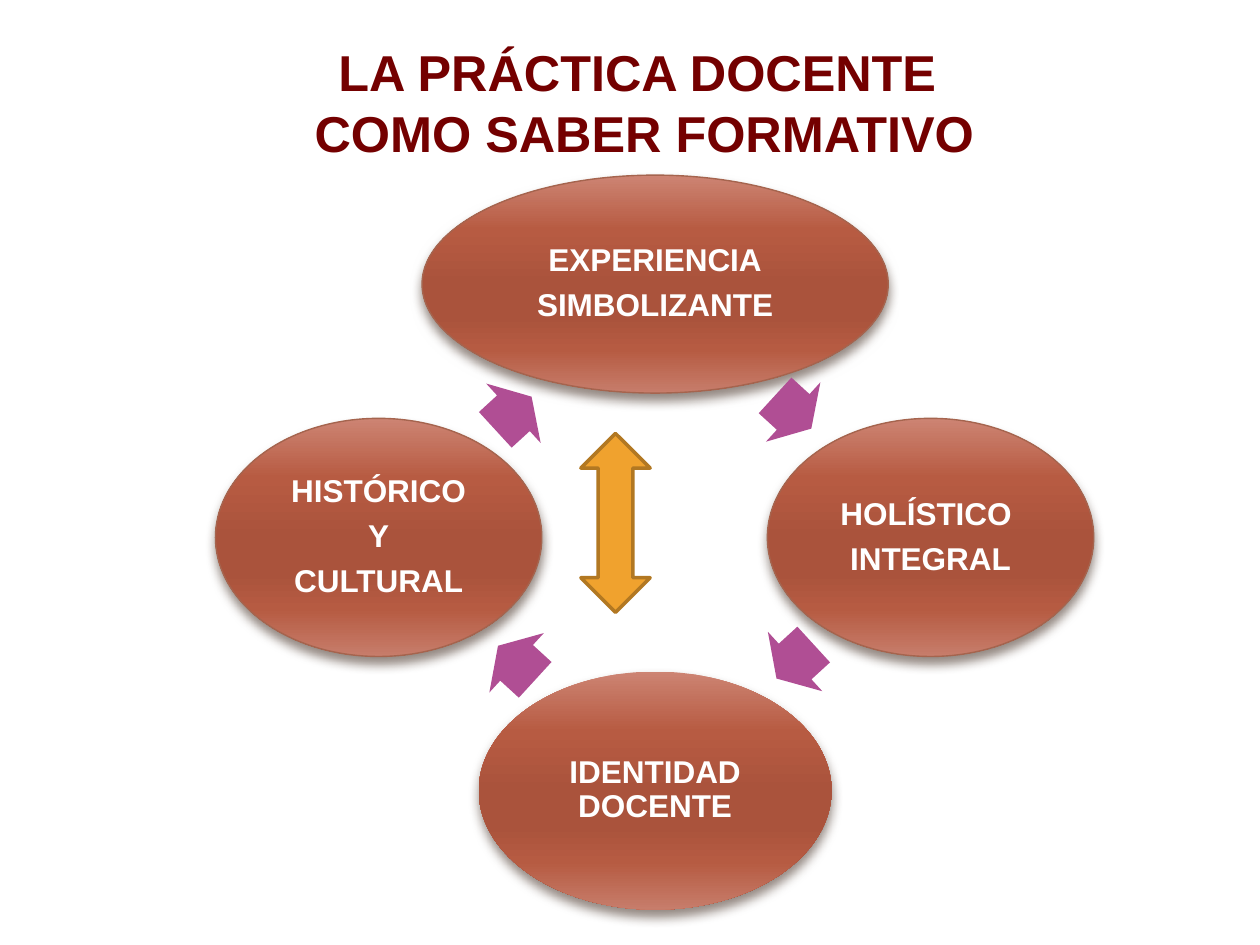
"""Build a slide with a four-part cycle on teaching practice."""
import pptx
import pptx.util
import pptx.oxml
import pptx.oxml.ns
import pptx.dml.color
import pptx.enum.shapes
import pptx.enum.text

Inches, Pt = pptx.util.Inches, pptx.util.Pt
RGBColor = pptx.dml.color.RGBColor
Kind = pptx.enum.shapes.MSO_SHAPE
Align = pptx.enum.text.PP_ALIGN
Anchor = pptx.enum.text.MSO_ANCHOR

WHITE = RGBColor(0xFF, 0xFF, 0xFF)
MAROON = RGBColor(0x74, 0x00, 0x00)
EDGE = RGBColor(0xA5, 0x64, 0x4E)
SHADE = RGBColor(0x4E, 0x3B, 0x30)
PURPLE = RGBColor(0xB0, 0x4E, 0x94)
GOLD = RGBColor(0xF0, 0xA2, 0x2E)
BRONZE = RGBColor(0xB2, 0x78, 0x22)
STOPS = [
    (0, RGBColor(0xCD, 0x84, 0x73)),
    (25, RGBColor(0xB7, 0x5B, 0x42)),
    (50, RGBColor(0xAA, 0x53, 0x3C)),
    (65, RGBColor(0xAA, 0x53, 0x3C)),
    (80, RGBColor(0xB6, 0x5B, 0x42)),
    (100, RGBColor(0xC7, 0x7D, 0x6B)),
]

TITLE = ["LA PRÁCTICA DOCENTE ", "COMO SABER FORMATIVO"]
OVALS = [
    (["EXPERIENCIA", "SIMBOLIZANTE"], (3.35, 1.39, 3.7, 1.73), True),
    (["HOLÍSTICO ", "INTEGRAL"], (6.09, 3.32, 2.59, 1.89), True),
    (["IDENTIDAD DOCENTE"], (3.8, 5.33, 2.8, 1.89), False),
    (["HISTÓRICO", " Y ", "CULTURAL"], (1.71, 3.32, 2.59, 1.89), True),
]
ARROWS = [
    ((6.1, 2.95, 0.39, 0.64), 42.5),
    ((6.11, 4.93, 0.4, 0.64), 137.5),
    ((3.9, 4.94, 0.4, 0.64), 222.5),
    ((3.88, 2.96, 0.39, 0.64), 317.5),
]
NS = pptx.oxml.ns.nsdecls("a")


def add_run(para, text, size, color):
    run = para.add_run()
    run.text = text
    run.font.name = "Arial"
    run.font.size = Pt(size)
    run.font.bold = True
    run.font.color.rgb = color


def add_form(slide, kind, box, edge=None, width=1):
    form = slide.shapes.add_shape(kind, *map(Inches, box))
    form.shadow.inherit = False
    if edge is None:
        form.line.fill.background()
    else:
        form.line.color.rgb = edge
        form.line.width = Pt(width)
    return form


def fill_solid(form, color):
    form.fill.solid()
    form.fill.fore_color.rgb = color


def add_glow(form):
    form.fill.gradient()
    props = form._element.spPr
    grad = props.find(pptx.oxml.ns.qn("a:gradFill"))
    stops = "".join(
        f'<a:gs pos="{pos * 1000}"><a:srgbClr val="{color}"/></a:gs>'
        for pos, color in STOPS)
    fresh = pptx.oxml.parse_xml(
        f'<a:gradFill {NS} rotWithShape="1"><a:gsLst>{stops}</a:gsLst>'
        '<a:lin ang="5400000" scaled="0"/></a:gradFill>')
    props.replace(grad, fresh)
    props.find(pptx.oxml.ns.qn("a:effectLst")).append(pptx.oxml.parse_xml(
        f'<a:outerShdw {NS} blurRad="{Pt(6)}" dist="{Pt(4)}" dir="5400000" '
        f'rotWithShape="0"><a:srgbClr val="{SHADE}">'
        '<a:alpha val="60000"/></a:srgbClr></a:outerShdw>'))


def add_oval(slide, lines, box, edged):
    oval = add_form(slide, Kind.OVAL, box, EDGE if edged else None, 0.79)
    add_glow(oval)
    frame = oval.text_frame
    frame.word_wrap = True
    frame.vertical_anchor = Anchor.MIDDLE
    frame.margin_left = frame.margin_right = Inches(0.03)
    frame.margin_top = frame.margin_bottom = Inches(0.03)
    for num, line in enumerate(lines):
        para = frame.add_paragraph() if num else frame.paragraphs[0]
        para.alignment = Align.CENTER
        para.line_spacing = 0.9
        para.space_after = Pt(6.3)
        add_run(para, line, 18, WHITE)


def add_arrow(slide, box, turn):
    arrow = add_form(slide, Kind.RIGHT_ARROW, box)
    fill_solid(arrow, PURPLE)
    arrow.rotation = turn
    arrow.adjustments[0] = 0.6
    arrow.adjustments[1] = 0.5


def add_title(slide):
    box = slide.shapes.add_textbox(*map(Inches, (1.22, 0.28, 7.79, 1.01)))
    box.text_frame.word_wrap = True
    para = box.text_frame.paragraphs[0]
    para.alignment = Align.CENTER
    for num, line in enumerate(TITLE):
        if num:
            para.add_line_break()
        add_run(para, line, 28.8, MAROON)


def main():
    deck = pptx.Presentation()
    deck.slide_width, deck.slide_height = Inches(10), Inches(7.5)
    slide = deck.slides.add_slide(deck.slide_layouts[6])
    for oval, arrow in zip(OVALS, ARROWS):
        add_oval(slide, *oval)
        add_arrow(slide, *arrow)
    axis = add_form(slide, Kind.UP_DOWN_ARROW, (4.61, 3.44, 0.55, 1.42),
                    BRONZE, 2)
    fill_solid(axis, GOLD)
    add_title(slide)
    deck.save("out.pptx")


if __name__ == "__main__":
    main()
